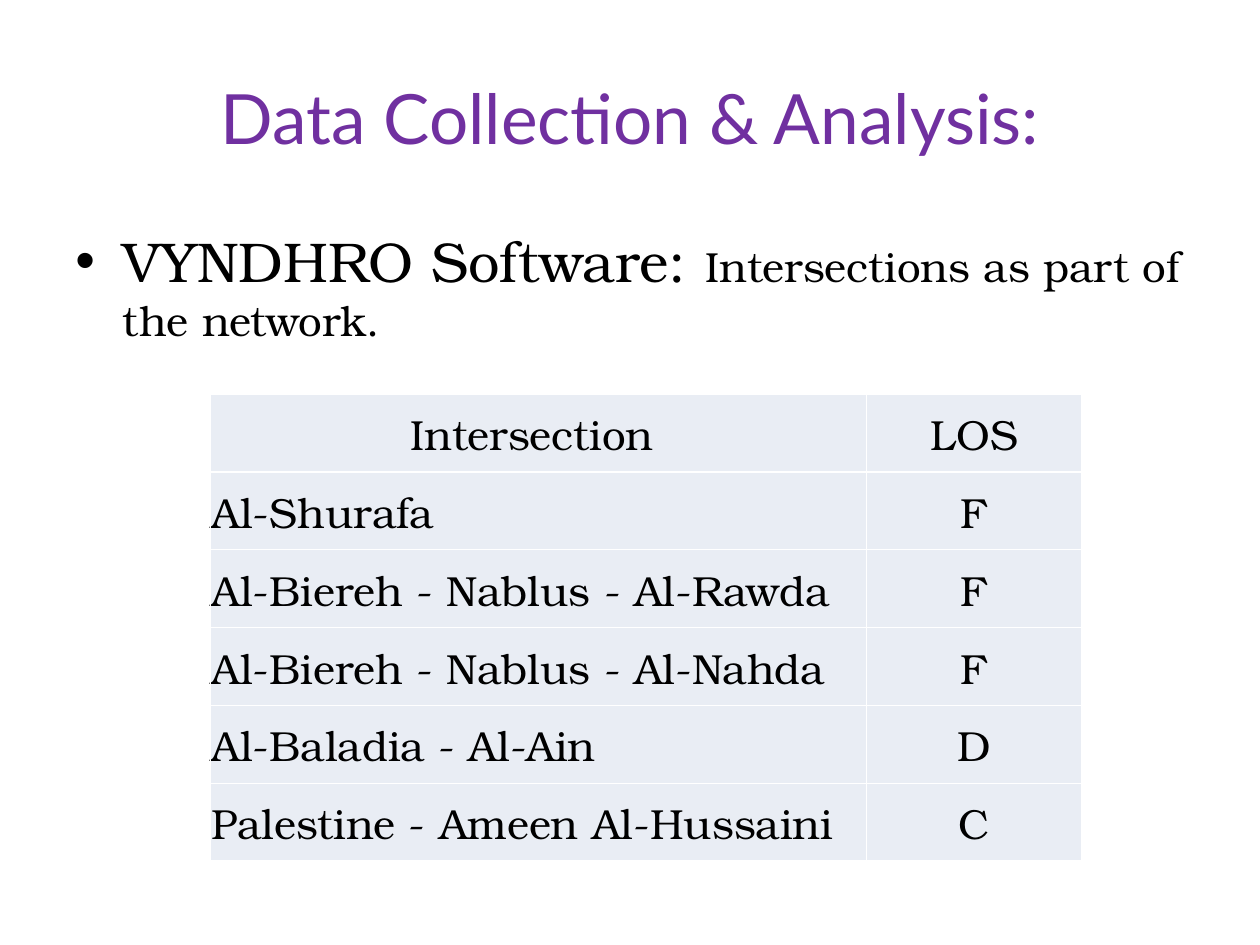
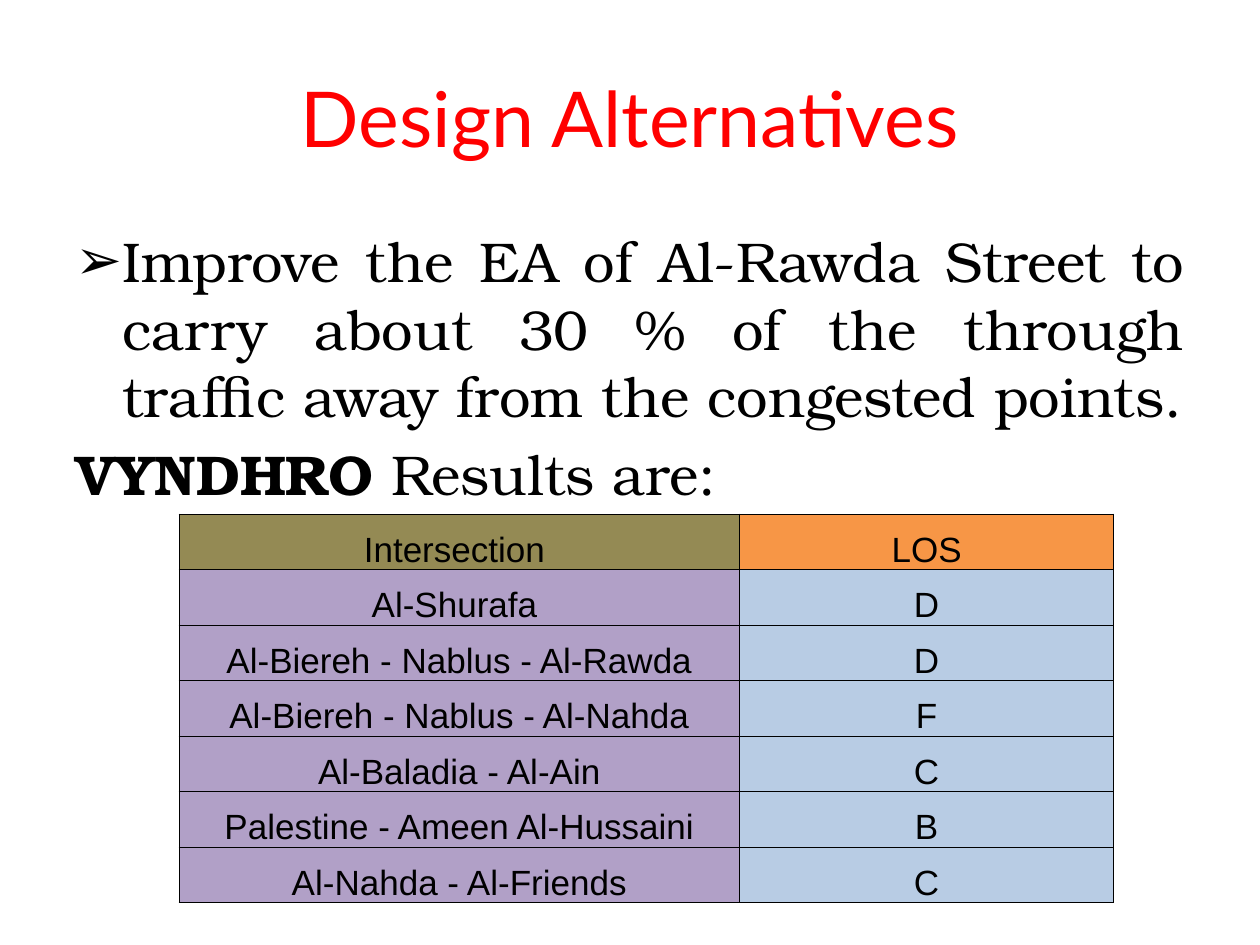
from dataclasses import dataclass

from lxml.etree import SubElement as Sub
from pptx import Presentation
from pptx.dml.color import RGBColor as Rgb
from pptx.enum.text import MSO_ANCHOR as Anchor, PP_ALIGN as Align
from pptx.oxml.ns import qn
from pptx.util import Cm, Pt


@dataclass(frozen=True)
class Theme:
    ink: str = "000000"
    white: str = "FFFFFF"
    purple: str = "7030A0"
    red: str = "FF0000"
    pale: str = "E9EDF4"
    olive: str = "948A54"
    orange: str = "F79646"
    lilac: str = "B1A0C7"
    sky: str = "B8CCE4"
    sans: str = "Lato"
    serif: str = "TeX Gyre Bonum"
    plain: str = "Arial"
    title: float = 44
    long: float = 39.6
    body: float = 32
    note: float = 24
    cell: float = 20


THEME = Theme()
HEAD = (1.27, 0.76, 22.86, 3.17)
BODY = (1.27, 4.45, 22.86, 12.57)
BRIEF = (1.27, 4.45, 22.86, 6.15)
INDENT = Cm(0.95)

PLACES = ["Al-Shurafa", "Al-Biereh - Nablus - Al-Rawda",
          "Al-Biereh - Nablus - Al-Nahda", "Al-Baladia - Al-Ain",
          "Palestine - Ameen Al-Hussaini"]
TITLES = ("Intersection ", "LOS")


def put(item, style):
    for name, value in style.items():
        setattr(item, name, value)


def add_run(para, text, font, size, color=THEME.ink, bold=False):
    run = para.add_run()
    run.text = text
    put(run.font, {"name": font, "size": Pt(size), "bold": bold})
    run.font.color.rgb = Rgb.from_string(color)


def add_box(slide, box, anchor=Anchor.TOP):
    frame = slide.shapes.add_textbox(*map(Cm, box)).text_frame
    put(frame, {"word_wrap": True, "vertical_anchor": anchor})
    return frame


def add_title(slide, text, color, size=THEME.title):
    para = add_box(slide, HEAD, Anchor.MIDDLE).paragraphs[0]
    para.alignment = Align.CENTER
    add_run(para, text, THEME.sans, size, color)


def add_body(slide, box, items, align=Align.LEFT):
    """Each item is a bullet (or None) and runs of text, size and bold."""
    frame = add_box(slide, box)
    for i, (bullet, runs) in enumerate(items):
        para = frame.add_paragraph() if i else frame.paragraphs[0]
        put(para, {"alignment": align, "space_before": Pt(THEME.body / 5)})
        if bullet:
            props = para._p.get_or_add_pPr()
            props.set("marL", str(INDENT))
            props.set("indent", str(-INDENT))
            Sub(props, qn("a:buFont"), typeface=THEME.plain)
            Sub(props, qn("a:buChar"), char=bullet)
        for text, size, bold in runs:
            add_run(para, text, THEME.serif, size, bold=bold)


def add_edges(cell, color, width):
    props = cell._tc.get_or_add_tcPr()
    for side in "LRTB":
        line = Sub(props, qn(f"a:ln{side}"), w=str(Pt(width)))
        Sub(Sub(line, qn("a:solidFill")), qn("a:srgbClr"), val=color)


def add_grid(slide, spot, widths, height, rows, look):
    """Fills come as a pair for the top row and a pair for the rest."""
    shape = slide.shapes.add_table(
        len(rows), len(widths), *map(Cm, (*spot, sum(widths), height * len(rows))))
    table = shape.table
    put(table, {"first_row": False, "horz_banding": False})
    for col, width in zip(table.columns, widths):
        col.width = Cm(width)
    for r, texts in enumerate(rows):
        table.rows[r].height = Cm(height)
        for c, text in enumerate(texts):
            cell = table.cell(r, c)
            put(cell, {"margin_left": Cm(0.03), "margin_right": Cm(0.03),
                       "margin_top": Cm(0.03), "margin_bottom": 0,
                       "vertical_anchor": look["anchor"]})
            add_edges(cell, *look["edge"])
            cell.fill.solid()
            cell.fill.fore_color.rgb = Rgb.from_string(look["fills"][r > 0][c])
            para = cell.text_frame.paragraphs[0]
            para.alignment = look["names"] if r and not c else Align.CENTER
            add_run(para, text, *look["font"])


def add_survey(deck):
    slide = deck.slides.add_slide(deck.slide_layouts[6])
    add_title(slide, "Data Collection & Analysis:", THEME.purple, THEME.long)
    add_body(slide, BODY, [("•", [
        ("VYNDHRO Software: ", THEME.body, False),
        ("Intersections as part of the network.", THEME.note, False)])])
    look = {"anchor": Anchor.MIDDLE, "names": Align.LEFT,
            "edge": (THEME.white, 1), "font": (THEME.serif, THEME.note),
            "fills": [(THEME.pale,) * 2] * 2}
    add_grid(slide, (4.24, 7.94), (13.23, 4.34), 1.57,
             [TITLES, *zip(PLACES, "FFFDC")], look)


def add_design(deck):
    slide = deck.slides.add_slide(deck.slide_layouts[6])
    add_title(slide, "Design Alternatives", THEME.red)
    add_body(slide, BRIEF, [
        ("➢", [("Improve the EA of Al-Rawda Street to carry about 30 % of the "
                "through traffic away from the congested points.",
                THEME.body, False)]),
        (None, [("VYNDHRO", THEME.body, True),
                (" Results are:", THEME.body, False)])], Align.JUSTIFY)
    look = {"anchor": Anchor.BOTTOM, "names": Align.CENTER,
            "edge": (THEME.ink, 0.5), "font": (THEME.plain, THEME.cell),
            "fills": [(THEME.olive, THEME.orange), (THEME.lilac, THEME.sky)]}
    names = [PLACES[0] + " ", *PLACES[1:], "Al-Nahda - Al-Friends"]
    add_grid(slide, (3.61, 10.36), (11.3, 7.54), 1.12,
             [TITLES, *zip(names, "DDFCBC")], look)


def main():
    deck = Presentation()
    put(deck, {"slide_width": Cm(25.4), "slide_height": Cm(19.05)})
    add_survey(deck)
    add_design(deck)
    deck.save("out.pptx")


if __name__ == "__main__":
    main()
